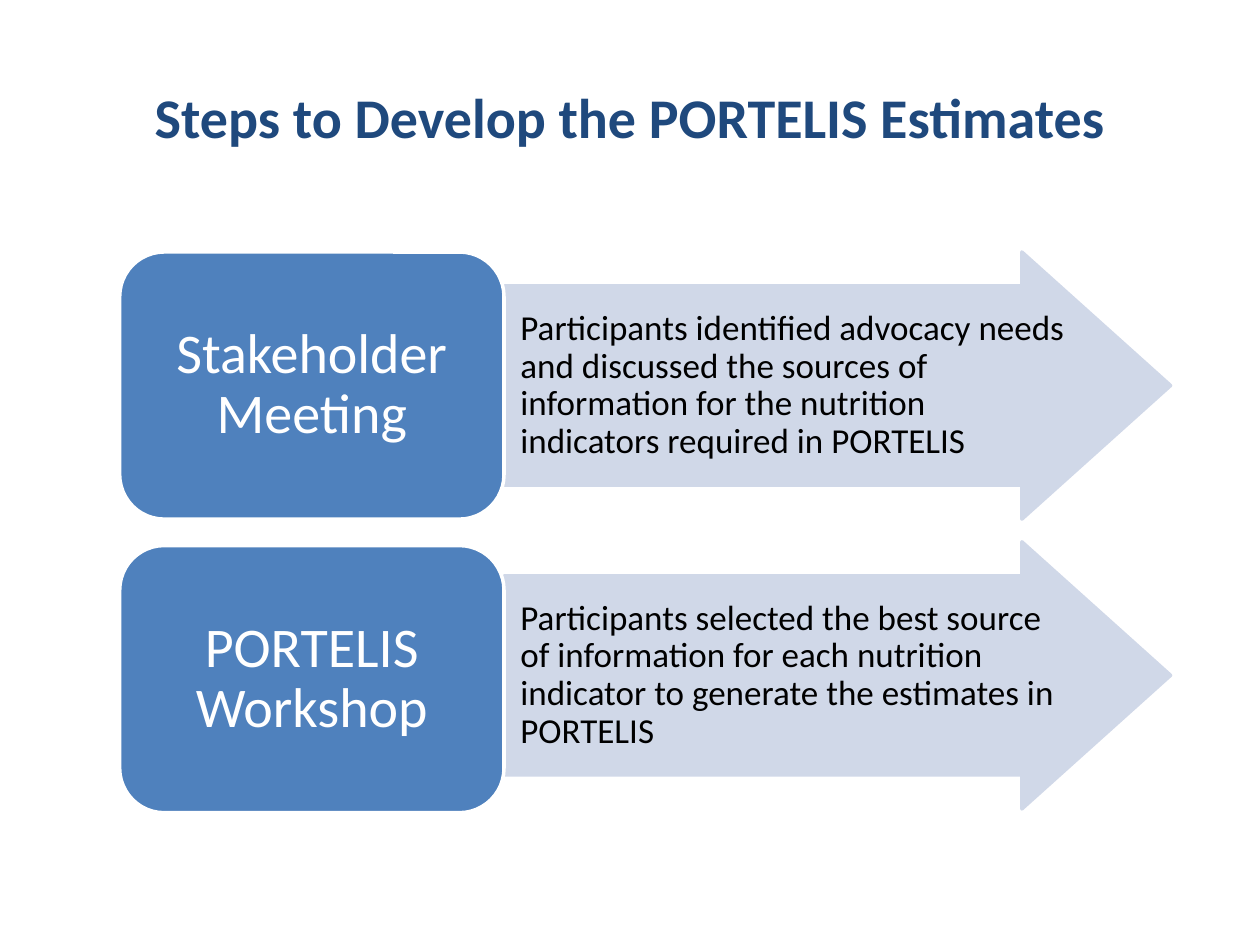
from dataclasses import dataclass

from pptx import Presentation
from pptx import util as u
from pptx.dml.color import RGBColor
from pptx.enum import shapes, text

# The slide is a grid of 100 columns and 75 rows, each cell a tenth of an inch.
COLUMNS, ROWS = 100, 75
CELL = u.Inches(0.1)

NAVY, BLUE, PALE, WHITE, BLACK = "1F497D", "4F81BD", "D0D8E8", "FFFFFF", "000000"

ARROW_LEFT, HEAD_LEFT, ARROW_TIP = 40, 81.1, 92.9
BOX_LEFT = 9.5
STEP_HEIGHT, HEAD_OVERHANG = 21.2, 2.7
FIRST_TOP, ARROW_PITCH, BOX_PITCH = 20, 23, 23.3


@dataclass
class Step:
    name: str
    outcome: str


@dataclass
class TextStyle:
    size: int
    color: str
    align: text.PP_ALIGN
    margins: tuple = (1, 0.5, 1, 0.5)  # left, top, right, bottom
    bold: bool = False
    line_spacing: float = 1.0


TITLE_STYLE = TextStyle(32, NAVY, text.PP_ALIGN.CENTER, bold=True)
NAME_STYLE = TextStyle(32, WHITE, text.PP_ALIGN.CENTER, (1.6, 0.8, 1.6, 0.8), line_spacing=0.9)
OUTCOME_STYLE = TextStyle(20, BLACK, text.PP_ALIGN.LEFT, (1.3, 2.8, 8.1, 2.8), line_spacing=0.9)

STEPS = [
    Step("Stakeholder Meeting",
         "Participants identified advocacy needs and discussed the sources of "
         "information for the nutrition indicators required in PORTELIS"),
    Step("PORTELIS Workshop",
         "Participants selected the best source of information for each nutrition "
         "indicator to generate the estimates in PORTELIS"),
]


def cells(count: float) -> u.Emu:
    return u.Emu(round(count * CELL))


def rgb(color: str) -> RGBColor:
    return RGBColor.from_string(color)


def write(shape, words: str, style: TextStyle) -> None:
    frame = shape.text_frame
    left, top, right, bottom = map(cells, style.margins)
    frame_format = {
        "word_wrap": True, "vertical_anchor": text.MSO_ANCHOR.MIDDLE,
        "margin_left": left, "margin_top": top,
        "margin_right": right, "margin_bottom": bottom,
    }
    paragraph = frame.paragraphs[0]
    run = paragraph.add_run()
    run.text = words
    formats = [
        (frame, frame_format),
        (paragraph, {"alignment": style.align, "line_spacing": style.line_spacing}),
        (run.font, {"name": "Calibri", "size": u.Pt(style.size), "bold": style.bold}),
    ]
    for target, values in formats:
        for attribute, value in values.items():
            setattr(target, attribute, value)
    run.font.color.rgb = rgb(style.color)


def paint(shape, fill: str, line: str) -> None:
    shape.shadow.inherit = False
    shape.fill.solid()
    shape.fill.fore_color.rgb = rgb(fill)
    shape.line.color.rgb = rgb(line)
    shape.line.width = u.Pt(2)


def draw_outcome_arrow(slide, top: float, outcome: str) -> None:
    bottom = top + STEP_HEIGHT
    shaft_top, shaft_bottom = top + HEAD_OVERHANG, bottom - HEAD_OVERHANG
    corners = [
        (ARROW_LEFT, shaft_top), (HEAD_LEFT, shaft_top), (HEAD_LEFT, top),
        (ARROW_TIP, top + STEP_HEIGHT / 2),
        (HEAD_LEFT, bottom), (HEAD_LEFT, shaft_bottom), (ARROW_LEFT, shaft_bottom),
    ]
    # The builder rounds its points to whole units, so they are given in EMU.
    start, *others = [(cells(column), cells(row)) for column, row in corners]
    outline = slide.shapes.build_freeform(*start)
    outline.add_line_segments(others)
    arrow = outline.convert_to_shape()
    paint(arrow, PALE, PALE)
    write(arrow, outcome, OUTCOME_STYLE)


def draw_name_box(slide, top: float, name: str) -> None:
    box = slide.shapes.add_shape(
        shapes.MSO_SHAPE.ROUNDED_RECTANGLE, cells(BOX_LEFT), cells(top),
        cells(ARROW_LEFT - BOX_LEFT), cells(STEP_HEIGHT))
    paint(box, BLUE, WHITE)
    write(box, name, NAME_STYLE)


def main() -> None:
    deck = Presentation()
    deck.slide_width, deck.slide_height = cells(COLUMNS), cells(ROWS)
    slide = deck.slides.add_slide(deck.slide_layouts[6])

    title = slide.shapes.add_textbox(cells(5), cells(3), cells(90), cells(12.5))
    write(title, "Steps to Develop the PORTELIS Estimates", TITLE_STYLE)

    for index, step in enumerate(STEPS):
        draw_outcome_arrow(slide, FIRST_TOP + index * ARROW_PITCH, step.outcome)
        draw_name_box(slide, FIRST_TOP + index * BOX_PITCH, step.name)

    deck.save("out.pptx")


if __name__ == "__main__":
    main()
